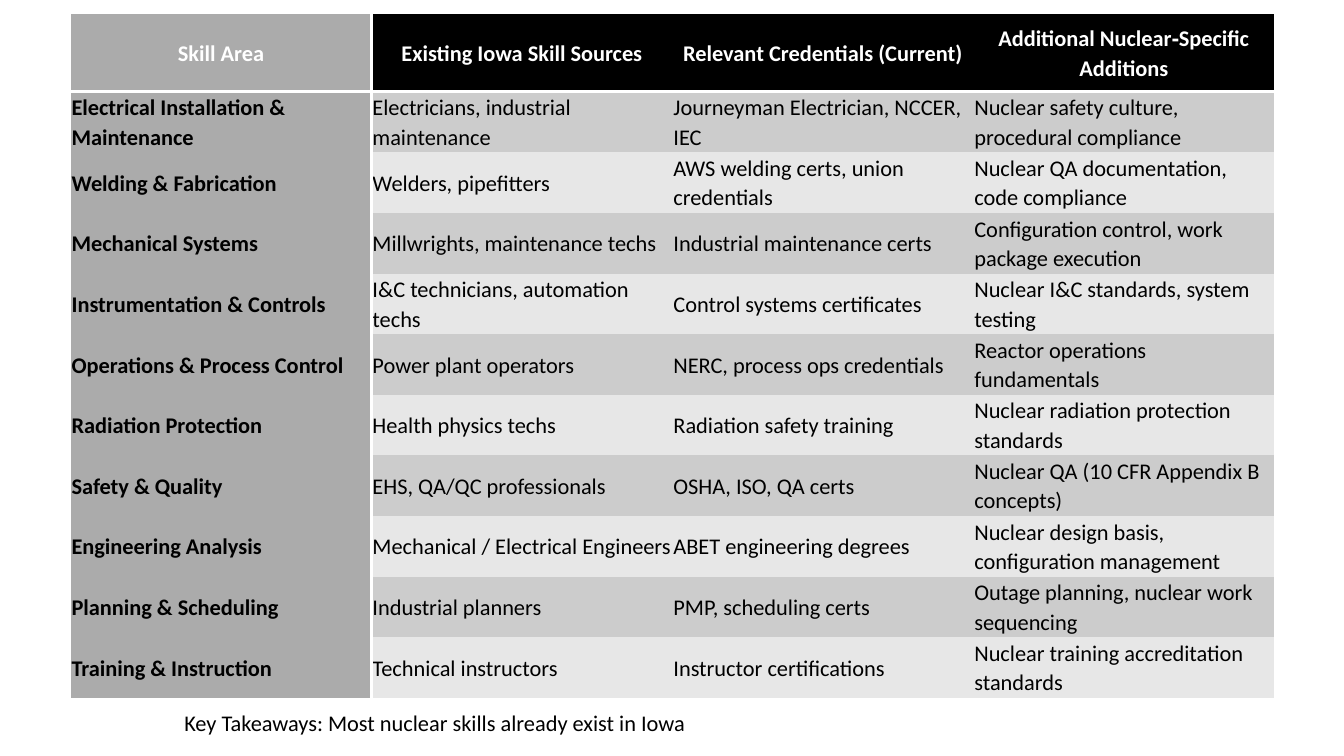
from dataclasses import dataclass

from lxml import etree
from pptx import Presentation, util as u
from pptx.dml.color import RGBColor
from pptx.enum import text
from pptx.oxml.ns import qn

COLORS = {
    "header": "000000",
    "skill": "ABABAB",
    "odd": "CCCCCC",
    "even": "E7E7E7",
    "light": "FFFFFF",
    "dark": "000000",
}
FONT, SIZE = "Calibri", 16
NO_GRID_STYLE = "{2D5ABB26-0587-4C30-8999-92F81FD0307C}"

# Table grid, in inches
LEFT, TOP, WIDTH = 0.7, 0.14, 11.94
HEADER_H, ROW_H = 0.77, 0.59
INSET = 0.01


@dataclass
class Skill:
    area: str
    sources: str
    credentials: str
    additions: str

    def texts(self) -> list[str]:
        return [self.area, self.sources, self.credentials, self.additions]


HEADER = Skill("Skill Area", "Existing Iowa Skill Sources",
               "Relevant Credentials (Current)", "Additional Nuclear‑Specific Additions")
SKILLS = [
    Skill("Electrical Installation & Maintenance", "Electricians, industrial maintenance",
          "Journeyman Electrician, NCCER, IEC", "Nuclear safety culture, procedural compliance"),
    Skill("Welding & Fabrication", "Welders, pipefitters",
          "AWS welding certs, union credentials", "Nuclear QA documentation, code compliance"),
    Skill("Mechanical Systems", "Millwrights, maintenance techs",
          "Industrial maintenance certs", "Configuration control, work package execution"),
    Skill("Instrumentation & Controls", "I&C technicians, automation techs",
          "Control systems certificates", "Nuclear I&C standards, system testing"),
    Skill("Operations & Process Control", "Power plant operators",
          "NERC, process ops credentials", "Reactor operations fundamentals"),
    Skill("Radiation Protection", "Health physics techs",
          "Radiation safety training", "Nuclear radiation protection standards"),
    Skill("Safety & Quality", "EHS, QA/QC professionals",
          "OSHA, ISO, QA certs", "Nuclear QA (10 CFR Appendix B concepts)"),
    Skill("Engineering Analysis", "Mechanical / Electrical Engineers",
          "ABET engineering degrees", "Nuclear design basis, configuration management"),
    Skill("Planning & Scheduling", "Industrial planners",
          "PMP, scheduling certs", "Outage planning, nuclear work sequencing"),
    Skill("Training & Instruction", "Technical instructors",
          "Instructor certifications", "Nuclear training accreditation standards"),
]


def style_run(r, color: str, bold: bool = False) -> None:
    r.font.name, r.font.size, r.font.bold = FONT, u.Pt(SIZE), bold
    r.font.color.rgb = RGBColor.from_string(COLORS[color])


def add_border(cell, side: str) -> None:
    """Put a 2 pt white line on one side: lnR or lnB."""
    ln = etree.Element(qn(f"a:{side}"), w=str(u.Pt(2)))
    fill = etree.SubElement(ln, qn("a:solidFill"))
    etree.SubElement(fill, qn("a:srgbClr"), val=COLORS["light"])
    cell._tc.get_or_add_tcPr().insert(0, ln)


def fill_cell(cell, content: str, row: int, col: int) -> None:
    is_header, is_skill = row == 0, col == 0
    cell.margin_left = cell.margin_right = u.Inches(INSET)
    cell.margin_top = cell.margin_bottom = u.Inches(INSET)
    cell.vertical_anchor = text.MSO_ANCHOR.MIDDLE

    # Text
    cell.text_frame.text = content
    p = cell.text_frame.paragraphs[0]
    p.line_spacing = 1.07
    if is_header:
        p.alignment = text.PP_ALIGN.CENTER
    style_run(p.runs[0], "light" if is_header else "dark", is_header or is_skill)

    # Fill and borders
    band = "odd" if row % 2 else "even"
    fill = "skill" if is_skill else "header" if is_header else band
    cell.fill.solid()
    cell.fill.fore_color.rgb = RGBColor.from_string(COLORS[fill])
    if is_header:
        add_border(cell, "lnB")
    if is_skill:
        add_border(cell, "lnR")


def add_skill_table(s) -> None:
    rows = [HEADER, *SKILLS]
    n_cols = len(HEADER.texts())
    height = HEADER_H + ROW_H * len(SKILLS)
    frame = s.shapes.add_table(len(rows), n_cols, u.Inches(LEFT), u.Inches(TOP),
                               u.Inches(WIDTH), u.Inches(height))
    table = frame.table
    table.horz_banding = False
    table.first_col = True
    next(frame.element.iter(qn("a:tableStyleId"))).text = NO_GRID_STYLE
    for column in table.columns:
        column.width = u.Inches(WIDTH / n_cols)
    for i, skill in enumerate(rows):
        table.rows[i].height = u.Inches(ROW_H if i else HEADER_H)
        for j, content in enumerate(skill.texts()):
            fill_cell(table.cell(i, j), content, i, j)


def add_takeaway(s, content: str) -> None:
    sp = s.shapes.add_textbox(u.Inches(1.73), u.Inches(6.99), u.Inches(9.87), u.Inches(0.37))
    tf = sp.text_frame
    tf.word_wrap = True
    tf.auto_size = text.MSO_AUTO_SIZE.SHAPE_TO_FIT_TEXT
    tf.text = content
    style_run(tf.paragraphs[0].runs[0], "dark")


def main() -> None:
    prs = Presentation()
    prs.slide_width, prs.slide_height = u.Inches(13.33), u.Inches(7.5)
    s = prs.slides.add_slide(prs.slide_layouts[6])
    add_skill_table(s)
    add_takeaway(s, "Key Takeaways: Most nuclear skills already exist in Iowa")
    prs.save("out.pptx")


if __name__ == "__main__":
    main()
